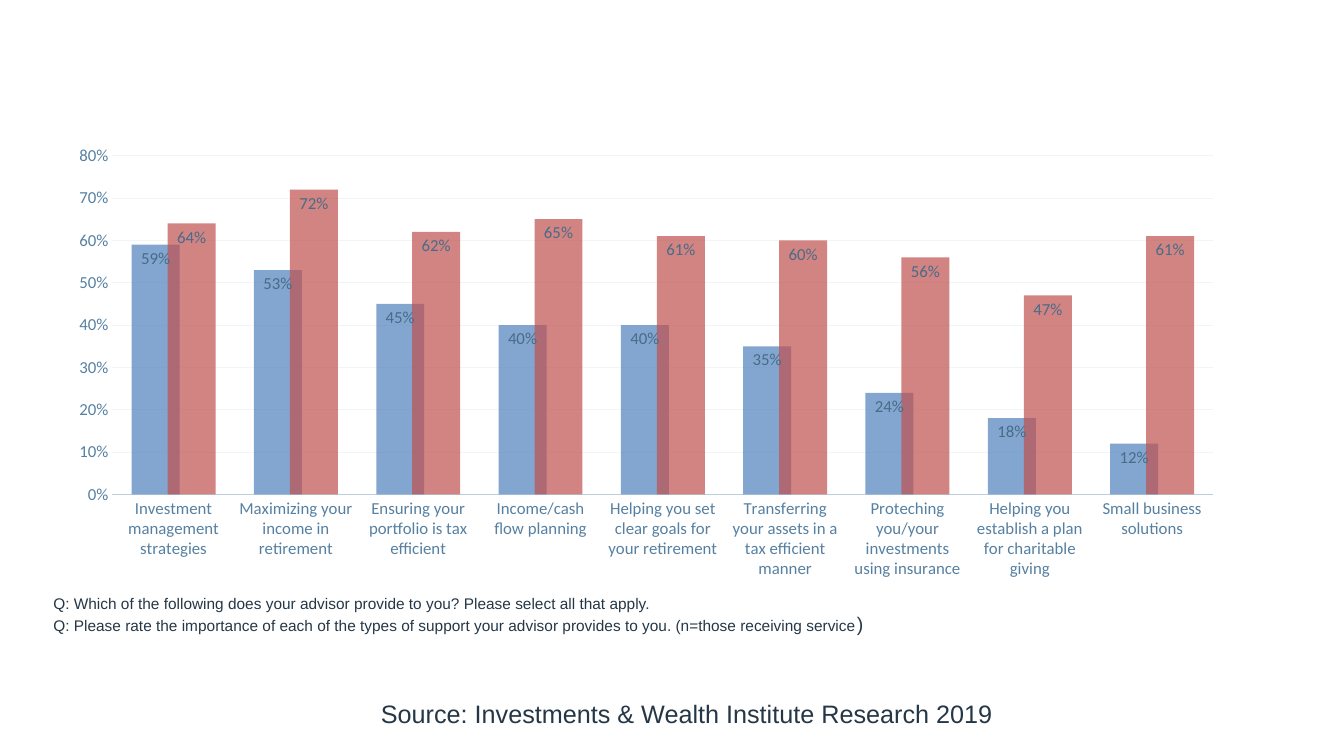
from lxml.etree import SubElement
from pptx import Presentation
from pptx.chart.data import CategoryChartData
from pptx.dml.color import RGBColor
from pptx.enum.chart import XL_CHART_TYPE, XL_LABEL_POSITION, XL_TICK_MARK
from pptx.oxml import parse_xml
from pptx.oxml.ns import nsdecls, qn
from pptx.util import Pt

COLORS = {
    "text": "253746",
    "axis_text": "5680A2",
    "axis_line": "BDCEDC",
    "grid": "F2F5F8",
    "label": "486B88",
    "provided": "4F81BD",
    "important": "C0504D",
}
PERCENT = "###0%"


def set_text(font, size=12, color="text", name="Calibri"):
    font.size = Pt(size)
    font.name = name
    font.color.rgb = RGBColor.from_string(COLORS[color])


presentation = Presentation()
presentation.slide_width = Pt(960)
presentation.slide_height = Pt(540)
slide = presentation.slides.add_slide(presentation.slide_layouts[6])

support = CategoryChartData(number_format=PERCENT)
support.categories = [
    "Investment management strategies",
    "Maximizing your income in retirement",
    "Ensuring your portfolio is tax efficient",
    "Income/cash flow planning",
    "Helping you set clear goals for your retirement",
    "Transferring your assets in a tax efficient manner",
    "Proteching you/your investments using insurance",
    "Helping you establish a plan for charitable giving",
    "Small business solutions",
]
support.add_series("Series 1", [0.59, 0.53, 0.45, 0.4, 0.4, 0.35, 0.24, 0.18, 0.12])
support.add_series("Series 2", [0.64, 0.72, 0.62, 0.65, 0.61, 0.6, 0.56, 0.47, 0.61])

chart = slide.shapes.add_chart(
    XL_CHART_TYPE.COLUMN_CLUSTERED, Pt(24), Pt(103), Pt(923), Pt(358.5), support
).chart
chart.has_title = False
chart.has_legend = False
set_text(chart.font, size=10)

for axis in (chart.category_axis, chart.value_axis):
    axis.major_tick_mark = XL_TICK_MARK.NONE
    axis.minor_tick_mark = XL_TICK_MARK.NONE
    set_text(axis.tick_labels.font, color="axis_text")

baseline = chart.category_axis.format.line
baseline.color.rgb = RGBColor.from_string(COLORS["axis_line"])
baseline.width = Pt(1.25)

percent_axis = chart.value_axis
percent_axis.minimum_scale = 0
percent_axis.maximum_scale = 0.8
percent_axis.major_unit = 0.1
percent_axis.tick_labels.number_format = PERCENT
percent_axis.tick_labels.number_format_is_linked = False
percent_axis.format.line.fill.background()
percent_axis.has_major_gridlines = True
gridlines = percent_axis.major_gridlines.format.line
gridlines.color.rgb = RGBColor.from_string(COLORS["grid"])
gridlines.width = Pt(0.75)

columns = chart.plots[0]
columns.gap_width = 80
columns.overlap = 25
columns.vary_by_categories = False
for series, color in zip(columns.series, ("provided", "important")):
    series.invert_if_negative = False
    series.format.fill.solid()
    series.format.fill.fore_color.rgb = RGBColor.from_string(COLORS[color])
    fill_color = series.format.fill._xPr.find(".//" + qn("a:srgbClr"))
    SubElement(fill_color, qn("a:alpha"), val="70000")
    labels = series.data_labels
    labels.show_value = True
    labels.position = XL_LABEL_POSITION.INSIDE_END
    labels.number_format = PERCENT
    labels.number_format_is_linked = False
    set_text(labels.font, color="label")

plot_area = chart._chartSpace.chart.plotArea
for automatic_layout in plot_area.findall(qn("c:layout")):
    plot_area.remove(automatic_layout)
plot_area.insert(0, parse_xml(
    f'<c:layout {nsdecls("c")}><c:manualLayout>'
    '<c:layoutTarget val="inner"/><c:xMode val="edge"/><c:yMode val="edge"/>'
    '<c:x val="0.061"/><c:y val="0.023"/><c:w val="0.852"/><c:h val="0.675"/>'
    '</c:manualLayout></c:layout>'
))

notes = [
    ((31, 420.5, 878, 55), [
        [("Q: Which of the following does your advisor provide to you? "
          "Please select all that apply.", 11)],
        [("Q: Please rate the importance of each of the types of support your "
          "advisor provides to you. (n=those receiving service", 11), (")", 14)],
    ]),
    ((265, 495.5, 690, 29), [
        [("Source: Investments & Wealth Institute Research 2019", 18)],
    ]),
]
for bounds, lines in notes:
    frame = slide.shapes.add_textbox(*map(Pt, bounds)).text_frame
    frame.word_wrap = True
    for index, line in enumerate(lines):
        paragraph = frame.add_paragraph() if index else frame.paragraphs[0]
        for words, size in line:
            run = paragraph.add_run()
            run.text = words
            set_text(run.font, size=size, name="Arial")

presentation.save("out.pptx")
